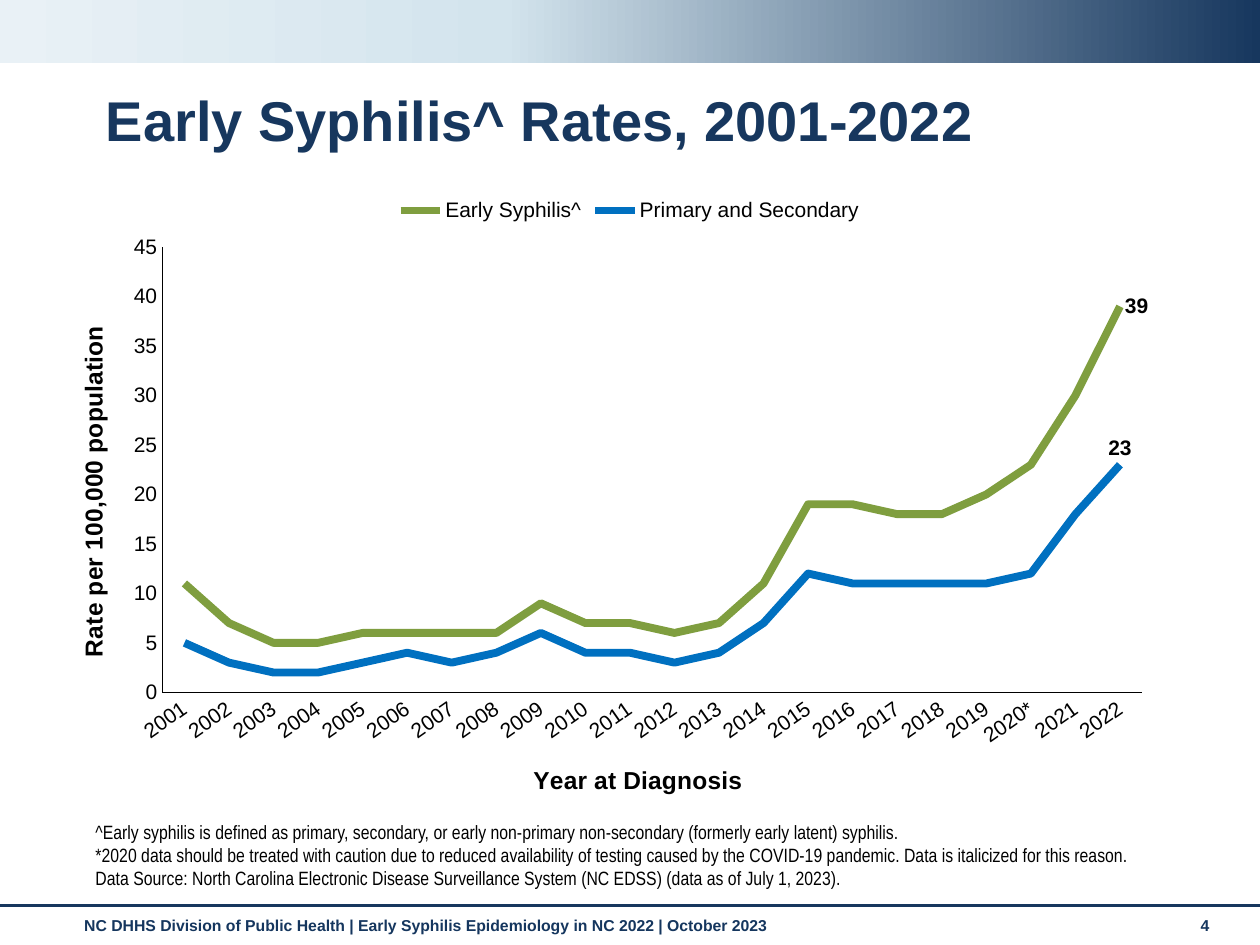
from copy import deepcopy
from dataclasses import dataclass

from lxml import etree
from pptx import Presentation
from pptx.chart.data import CategoryChartData
from pptx.dml.color import RGBColor
from pptx.enum.chart import (XL_CHART_TYPE, XL_LABEL_POSITION, XL_LEGEND_POSITION,
                             XL_MARKER_STYLE, XL_TICK_MARK)
from pptx.enum.shapes import MSO_CONNECTOR, MSO_SHAPE
from pptx.enum.text import MSO_ANCHOR, MSO_AUTO_SIZE, PP_ALIGN
from pptx.oxml import parse_xml
from pptx.oxml.ns import nsdecls, qn
from pptx.util import Inches, Pt

TOP, MIDDLE, BOTTOM = MSO_ANCHOR.TOP, MSO_ANCHOR.MIDDLE, MSO_ANCHOR.BOTTOM
RIGHT, ABOVE = XL_LABEL_POSITION.RIGHT, XL_LABEL_POSITION.ABOVE
NO_TICK = XL_TICK_MARK.NONE


@dataclass(frozen=True)
class Theme:
    navy: str = "17375E"
    footer: str = "15365E"
    black: str = "000000"
    green: str = "7F9E3F"
    blue: str = "0070C0"
    banner: tuple = ((0, "17375E"), (0.6, "D3E4ED"), (1, "E9F1F6"))
    font: str = "Arial"
    narrow: str = "Arial Narrow"
    title_size: float = 32
    axis_title_size: float = 14
    chart_size: float = 12
    note_size: float = 11
    footer_size: float = 9


THEME = Theme()

# Content
TITLE = "Early Syphilis^ Rates, 2001-2022"
YEARS = [f"{year}*" if year == 2020 else str(year) for year in range(2001, 2023)]
SERIES = [
    ("Early Syphilis^", THEME.green, RIGHT,
     [11, 7, 5, 5, 6, 6, 6, 6, 9, 7, 7, 6, 7, 11, 19, 19, 18, 18, 20, 23, 30, 39]),
    ("Primary and Secondary", THEME.blue, ABOVE,
     [5, 3, 2, 2, 3, 4, 3, 4, 6, 4, 4, 3, 4, 7, 12, 11, 11, 11, 11, 12, 18, 23]),
]
YEAR_TITLE = "Year at Diagnosis"
RATE_TITLE = "Rate per 100,000 population"
NOTES = [
    "^Early syphilis is defined as primary, secondary, or early non-primary non-secondary "
    "(formerly early latent) syphilis.",
    "*2020 data should be treated with caution due to reduced availability of testing caused "
    "by the COVID-19 pandemic. Data is italicized for this reason.",
    "Data Source: North Carolina Electronic Disease Surveillance System (NC EDSS) "
    "(data as of July 1, 2023).",
]
FOOTER = "NC DHHS Division of Public Health | Early Syphilis Epidemiology in NC 2022 | October 2023"
PAGE_NUMBER = "4"

# Places in inches: left, top, width, height
WIDTH, HEIGHT = 10, 7.5
PLACES = {
    "banner": (0, 0, WIDTH, 0.5),
    "title": (0.74, 0.68, 8.58, 0.6),
    "chart": (0.58, 1.47, 8.84, 4.91),
    "notes": (0.66, 6.57, 8.74, 0.54),
    "footer": (0.57, 7.22, 8.74, 0.29),
    "number": (9.43, 7.22, 0.44, 0.3),
}
RULE_TOP = 7.19
PLOT_SHARES = {"x": 0.08, "y": 0.1, "w": 0.88, "h": 0.72}
YEAR_ANGLE = -35


def place(name):
    return [Inches(length) for length in PLACES[name]]


def style_font(font, size, color=THEME.black, bold=False, name=THEME.font):
    formats = {"size": Pt(size), "bold": bold, "name": name}
    for key, value in formats.items():
        setattr(font, key, value)
    font.color.rgb = RGBColor.from_string(color)


def write_text(shape, lines, anchor, spacing=1.0, **font_format):
    frame = shape.text_frame
    formats = {"word_wrap": True, "auto_size": MSO_AUTO_SIZE.NONE, "vertical_anchor": anchor}
    for key, value in formats.items():
        setattr(frame, key, value)
    for index, line in enumerate(lines):
        para = frame.add_paragraph() if index else frame.paragraphs[0]
        para.alignment, para.line_spacing = PP_ALIGN.LEFT, spacing
        span = para.add_run()
        span.text = line
        style_font(span.font, **font_format)


def add_banner(page):
    banner = page.shapes.add_shape(MSO_SHAPE.RECTANGLE, *place("banner"))
    banner.shadow.inherit = False
    banner.line.fill.background()
    banner.fill.gradient()
    banner.fill.gradient_angle = 180
    stops = banner.fill.gradient_stops
    first = banner.element.find(".//" + qn("a:gs"))
    first.addnext(deepcopy(first))
    stops = banner.fill.gradient_stops
    for stop, (position, color) in zip(stops, THEME.banner):
        stop.position = position
        stop.color.rgb = RGBColor.from_string(color)


def add_rule(page):
    rule = page.shapes.add_connector(MSO_CONNECTOR.STRAIGHT, 0, Inches(RULE_TOP),
                                     Inches(WIDTH), Inches(RULE_TOP))
    rule.line.color.rgb = RGBColor.from_string(THEME.navy)
    rule.line.width = Pt(1.75)
    etree.SubElement(rule.element.spPr, qn("a:effectLst"))


def style_axis(axis, title):
    formats = {"has_major_gridlines": False, "major_tick_mark": NO_TICK,
               "minor_tick_mark": NO_TICK}
    for key, value in formats.items():
        setattr(axis, key, value)
    axis.format.line.color.rgb = RGBColor.from_string(THEME.black)
    axis.format.line.width = Pt(0.25)
    style_font(axis.tick_labels.font, THEME.chart_size)
    frame = axis.axis_title.text_frame
    frame.text = title
    style_font(frame.paragraphs[0].runs[0].font, THEME.axis_title_size, bold=True)


def fix_plot_area(chart):
    plot_area = chart.element.find(".//" + qn("c:plotArea"))
    for old in plot_area.findall(qn("c:layout")):
        plot_area.remove(old)
    modes = '<c:layoutTarget val="inner"/><c:xMode val="edge"/><c:yMode val="edge"/>'
    shares = "".join(f'<c:{key} val="{share}"/>' for key, share in PLOT_SHARES.items())
    plot_area.insert(0, parse_xml(f'<c:layout {nsdecls("c")}><c:manualLayout>{modes}{shares}'
                                  '</c:manualLayout></c:layout>'))


def add_rate_chart(page):
    data = CategoryChartData(number_format="#,##0")
    data.categories = YEARS
    for name, _, _, values in SERIES:
        data.add_series(name, values)
    chart = page.shapes.add_chart(XL_CHART_TYPE.LINE, *place("chart"), data).chart
    style_font(chart.font, THEME.chart_size)
    chart.has_title = False
    chart.plots[0].vary_by_categories = False

    # Legend
    chart.has_legend = True
    chart.legend.position = XL_LEGEND_POSITION.TOP
    chart.legend.include_in_layout = False
    style_font(chart.legend.font, THEME.chart_size)

    # Axes
    style_axis(chart.category_axis, YEAR_TITLE)
    style_axis(chart.value_axis, RATE_TITLE)
    scale = {"minimum_scale": 0, "maximum_scale": 45, "major_unit": 5}
    for key, value in scale.items():
        setattr(chart.value_axis, key, value)
    year_body = chart.element.find(f".//{qn('c:catAx')}/{qn('c:txPr')}/{qn('a:bodyPr')}")
    year_body.set("rot", str(YEAR_ANGLE * 60000))

    # Lines, with a label on the last year only
    for series, (_, color, position, values) in zip(chart.plots[0].series, SERIES):
        series.smooth = False
        series.marker.style = XL_MARKER_STYLE.NONE
        series.format.line.color.rgb = RGBColor.from_string(color)
        series.format.line.width = Pt(4.5)
        label = series.points[len(values) - 1].data_label
        style_font(label.font, THEME.chart_size, bold=True)
        label.position = position
    fix_plot_area(chart)


def main():
    deck = Presentation()
    deck.slide_width, deck.slide_height = Inches(WIDTH), Inches(HEIGHT)
    page = deck.slides.add_slide(deck.slide_layouts[5])

    add_banner(page)
    add_rule(page)

    title = page.shapes.title
    title.left, title.top, title.width, title.height = place("title")
    write_text(title, [TITLE], MIDDLE, 0.9, size=THEME.title_size, color=THEME.navy, bold=True)

    add_rate_chart(page)

    # Notes and footer
    footer_format = {"size": THEME.footer_size, "color": THEME.footer, "bold": True}
    note_format = {"size": THEME.note_size, "name": THEME.narrow}
    for name, lines, anchor, font_format in [
        ("notes", NOTES, BOTTOM, note_format),
        ("footer", [FOOTER], TOP, footer_format),
        ("number", [PAGE_NUMBER], TOP, footer_format),
    ]:
        write_text(page.shapes.add_textbox(*place(name)), lines, anchor, **font_format)

    deck.save("out.pptx")


if __name__ == "__main__":
    main()
